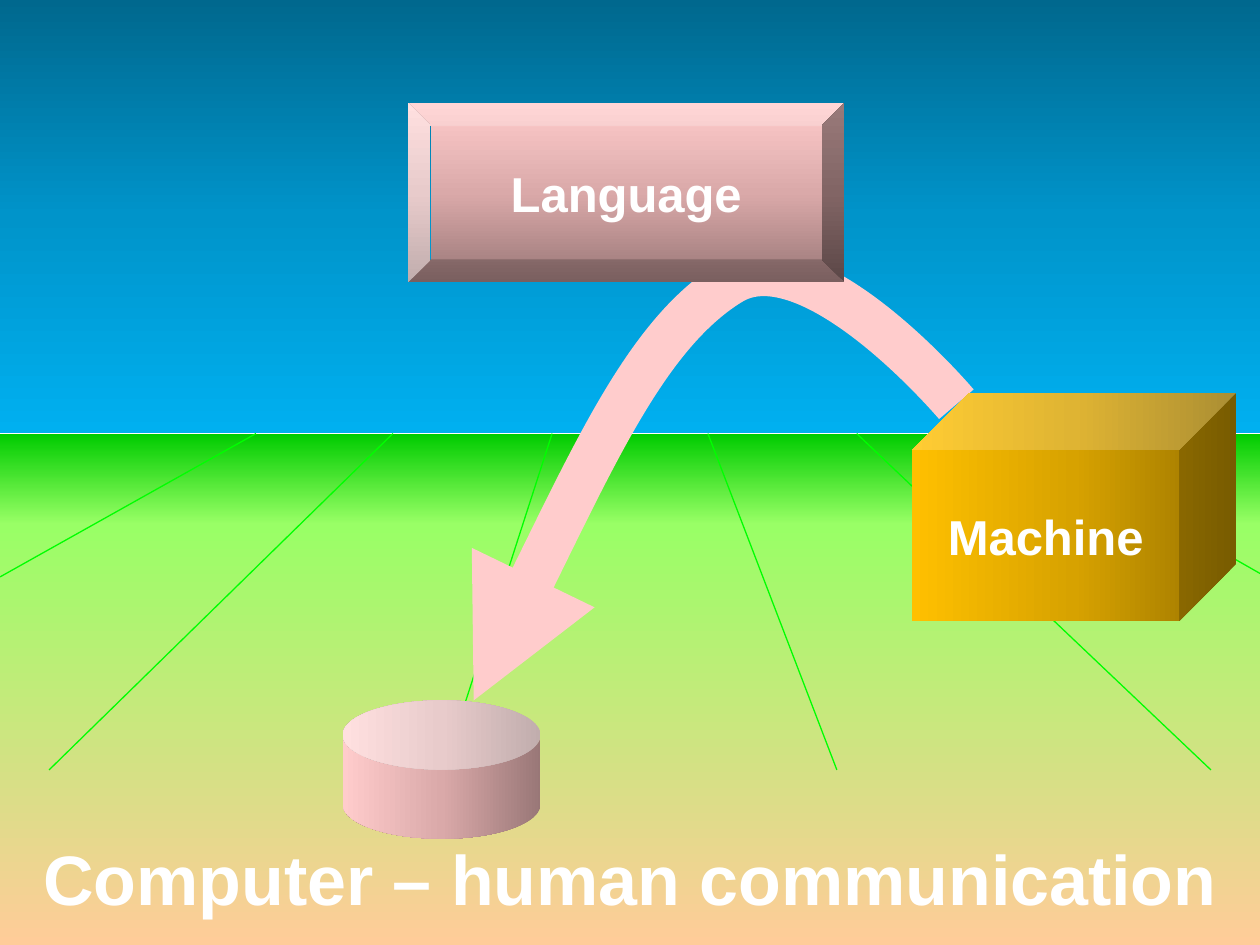
"""Build the slide on communication between computer and human."""
from copy import deepcopy
from lxml.etree import SubElement
from pptx import Presentation
from pptx.dml.color import RGBColor as Rgb
from pptx.enum.shapes import MSO_CONNECTOR as Link, MSO_SHAPE as Kind
from pptx.enum.text import MSO_ANCHOR as Anchor, MSO_AUTO_SIZE as Auto, PP_ALIGN as Align
from pptx.oxml.ns import qn
from pptx.util import Cm, Pt

WIDE, HIGH = 25.4, 19.05
SKY_END, GRASS_END, NEAR = 8.74, 10.57, 15.52

THEME = {
    "font": "Arial", "text": "FFFFFF", "title": 40, "label": 28,
    "ray": "00FF00", "ray_wide": 0.75, "arrow": "FFCCCC", "arrow_wide": 26,
    "land": ["99FF66", "FFCC99"],
    "grass": ["00CC00", "99FF66"],
    "sky": ["00688E", "0094CA", "00B0F0"],
    "pink": ["997777", "DAA9A9", "FFCCCC"],
    "gold": ["977200", "D7A200", "FFC000"],
}

TITLE = ("Computer – human communication", (0, 16.71, WIDE, 1.96))
GROUND = [
    ("land", (0, GRASS_END, WIDE, HIGH - GRASS_END)),
    ("grass", (0, SKY_END, WIDE, GRASS_END - SKY_END)),
]
SKY = ("sky", (0, 0, WIDE, SKY_END))
RAYS = [
    (14.27, 16.87, NEAR), (20.45, WIDE, 11.56), (17.27, 24.41, NEAR),
    (11.13, 8.94, NEAR), (7.92, 0.99, NEAR), (5.16, 0, 11.63),
]
START, PEAK = (9.55, 14.12), (14.73, 5.51)
CURVES = [
    [(11.33, 10.41), (13.11, 6.68), (14.73, 5.69)],
    [(16.36, 4.7), (19.28, 8.15), (19.28, 8.15)],
]
SOLIDS = [
    (Kind.CAN, "pink", 180, (6.91, 14.12, 3.99, 2.79), ""),
    (Kind.BEVEL, "pink", 270, (8.23, 2.08, 8.79, 3.61), "Language"),
    (Kind.CUBE, "gold", 180, (18.39, 7.92, 6.53, 4.6), "Machine"),
]


def shade(fill, name, angle):
    tones = THEME[name]
    fill.gradient()
    fill.gradient_angle = (360 - angle) % 360
    first = fill.gradient_stops[0]._gs
    while len(fill.gradient_stops) < len(tones):
        first.addnext(deepcopy(first))
    for rank, (stop, tone) in enumerate(zip(fill.gradient_stops, tones)):
        stop.position = rank / (len(tones) - 1)
        stop.color.rgb = Rgb.from_string(tone)


def write(shape, text, size, anchor):
    frame = shape.text_frame
    frame.text = text
    frame.word_wrap = True
    frame.vertical_anchor = anchor
    para = frame.paragraphs[0]
    para.alignment = Align.CENTER
    for run in para.runs:
        run.font.name, run.font.size, run.font.bold = THEME["font"], Pt(size), True
        run.font.color.rgb = Rgb.from_string(THEME["text"])


def add_solid(shapes, kind, tones, angle, box, text=""):
    shape = shapes.add_shape(kind, *map(Cm, box))
    shape.shadow.inherit = False
    shape.line.fill.background()
    shade(shape.fill, tones, angle)
    if kind == Kind.CAN:
        shape.adjustments[0] = 0.5
    if text:
        write(shape, text, THEME["label"], Anchor.MIDDLE)


def add_ray(shapes, top, foot, end):
    ray = shapes.add_connector(Link.STRAIGHT, *map(Cm, (top, SKY_END, foot, end)))
    ray.line.color.rgb = Rgb.from_string(THEME["ray"])
    ray.line.width = Pt(THEME["ray_wide"])
    SubElement(ray._element.spPr, qn("a:effectLst"))


def add_arrow(shapes):
    pen = shapes.build_freeform(*map(Cm, START))
    pen.add_line_segments(
        [tuple(map(Cm, spot)) for spot in (PEAK, CURVES[-1][-1])], close=False)
    arrow = pen.convert_to_shape()
    arrow.shadow.inherit = False
    arrow.fill.background()
    arrow.line.color.rgb = Rgb.from_string(THEME["arrow"])
    arrow.line.width = Pt(THEME["arrow_wide"])
    SubElement(arrow.line._get_or_add_ln(), qn("a:headEnd"), type="triangle")
    track = arrow._element.spPr.find(".//" + qn("a:path"))
    for part in track.findall(qn("a:lnTo")):
        track.remove(part)
    for curve in CURVES:
        bend = SubElement(track, qn("a:cubicBezTo"))
        for left, top in curve:
            SubElement(bend, qn("a:pt"), x=str(Cm(left) - arrow.left),
                       y=str(Cm(top) - arrow.top))


def main():
    deck = Presentation()
    deck.slide_width, deck.slide_height = Cm(WIDE), Cm(HIGH)
    shapes = deck.slides.add_slide(deck.slide_layouts[5]).shapes
    for tones, box in GROUND:
        add_solid(shapes, Kind.RECTANGLE, tones, 90, box)
    for ray in RAYS:
        add_ray(shapes, *ray)
    add_solid(shapes, Kind.RECTANGLE, SKY[0], 90, SKY[1])

    title, (text, box) = shapes.title, TITLE
    title.left, title.top, title.width, title.height = map(Cm, box)
    write(title, text, THEME["title"], Anchor.TOP)
    title.text_frame.auto_size = Auto.SHAPE_TO_FIT_TEXT
    shapes._spTree.append(title._element)

    add_arrow(shapes)
    for solid in SOLIDS:
        add_solid(shapes, *solid)
    deck.save("out.pptx")


if __name__ == "__main__":
    main()
